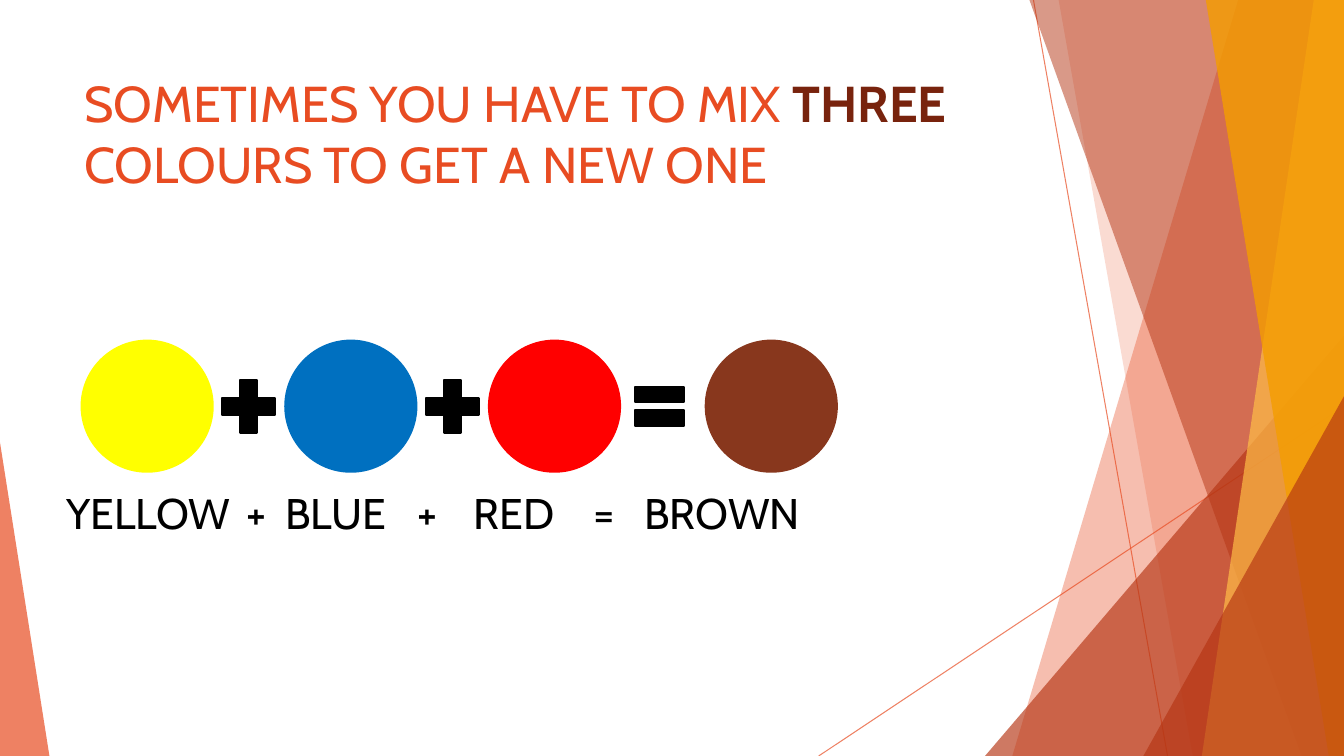
import pptx
import pptx.util
import pptx.dml.color
import pptx.enum.shapes
import pptx.enum.text
import pptx.oxml
import pptx.oxml.ns

Inches = pptx.util.Inches
Pt = pptx.util.Pt
Kind = pptx.enum.shapes.MSO_SHAPE
qn = pptx.oxml.ns.qn

WIDE, HIGH = 13.33, 7.5
FONT = "Cabin"
RAYS = [((10.25, 0), (11.58, HIGH)), ((WIDE, 4.03), (8.12, HIGH))]
DECOR = [
    ("band", 12.28, 10.04, "E84C22", 36),
    ("band", 10.5, 11.83, "E84C22", 20),
    ("peak", (9.77, 3.33, 3.56), 1, "B53513", 66),
    ("band", 10.21, 12.91, "B53513", 50),
    ("band", 13.03, 11.92, "FFBD47", 70),
    ("band", 11.96, 13.18, "F49D00", 80),
    ("peak", (11.34, 3.93, 1.99), 1, "B53513", 66),
    ("peak", (0, 4.39, 0.49), 0, "E84C22", 70),
]
TITLE = [
    ("SOMETIMES YOU HAVE TO MIX ", "E84C22", False),
    ("THREE", "78230D", True),
    (" COLOURS TO GET A NEW ONE", "E84C22", False),
]
MID = 4.03
SIGNS = [
    (Kind.OVAL, 0.81, 1.3, "FFFF00"),
    (Kind.MATH_PLUS, 2.11, 0.71, "000000"),
    (Kind.OVAL, 2.83, 1.3, "0070C0"),
    (Kind.MATH_PLUS, 4.13, 0.71, "000000"),
    (Kind.OVAL, 4.85, 1.3, "FF0000"),
    (Kind.MATH_EQUAL, 6.21, 0.66, "000000"),
    (Kind.OVAL, 7, 1.3, "88371D"),
]
WORDS = ["YELLOW", "+", "BLUE", "+", "RED", "=", "BROWN"]
STOPS = [1.79, 2.17, 3.48, 4.04, 5.23, 5.73]

deck = pptx.Presentation()
deck.slide_width, deck.slide_height = Inches(WIDE), Inches(HIGH)
slide = deck.slides.add_slide(deck.slide_layouts[6])
shapes = slide.shapes


def paint(fill, color, alpha=100):
    fill.solid()
    fill.fore_color.rgb = pptx.dml.color.RGBColor.from_string(color)
    if alpha < 100:
        tone = fill._xPr.find(".//" + qn("a:srgbClr"))
        tone.append(tone.makeelement(qn("a:alpha"), {"val": str(alpha * 1000)}))


def add_box(left, top, width, height):
    frame = shapes.add_textbox(*map(Inches, (left, top, width, height))).text_frame
    frame.word_wrap = True
    frame.vertical_anchor = pptx.enum.text.MSO_ANCHOR.TOP
    return frame.paragraphs[0]


def add_run(para, text, size, color, bold=False):
    run = para.add_run()
    run.text = text
    run.font.name, run.font.size, run.font.bold = FONT, Pt(size), bold
    paint(run.font.fill, color)


def add_band(top, base):
    edge = [(WIDE, 0), (WIDE, HIGH), (base, HIGH)]
    form = shapes.build_freeform(Inches(top), 0)
    form.add_line_segments([(Inches(x), Inches(y)) for x, y in edge])
    return form.convert_to_shape()


def add_peak(place, tip):
    left, top, width = place
    peak = shapes.add_shape(Kind.ISOSCELES_TRIANGLE,
                            *map(Inches, (left, top, width, HIGH - top)))
    peak.adjustments[0] = tip
    return peak


for start, end in RAYS:
    ray = shapes.add_connector(pptx.enum.shapes.MSO_CONNECTOR.STRAIGHT,
                               *map(Inches, start + end))
    ray.line.width = Pt(0.75)
    paint(ray.line.fill, "E84C22", 70)
    props = ray._element.spPr
    props.append(props.makeelement(qn("a:effectLst"), {}))

for kind, first, second, color, alpha in DECOR:
    part = (add_band if kind == "band" else add_peak)(first, second)
    part.shadow.inherit = False
    paint(part.fill, color, alpha)
    part.line.fill.background()

title = add_box(0.74, 0.67, 9.4, 1.44)
for text, color, bold in TITLE:
    add_run(title, text, 36, color, bold)

for kind, left, size, color in SIGNS:
    sign = shapes.add_shape(kind, *map(Inches, (left, MID - size / 2, size, size)))
    sign.shadow.inherit = False
    paint(sign.fill, color)
    paint(sign.line.fill, color)
    sign.line.width = Pt(1.5)

para = add_box(0.56, 4.63, 8.31, 0.71)
para.line_spacing = 1.3
props = para._p.get_or_add_pPr()
tabs = props.makeelement(qn("a:tabLst"), {})
props.append(tabs)
for stop in STOPS:
    tabs.append(tabs.makeelement(qn("a:tab"), {"pos": str(Inches(stop)), "algn": "l"}))
add_run(para, "\t".join(WORDS), 30.6, "000000")

deck.save("out.pptx")
